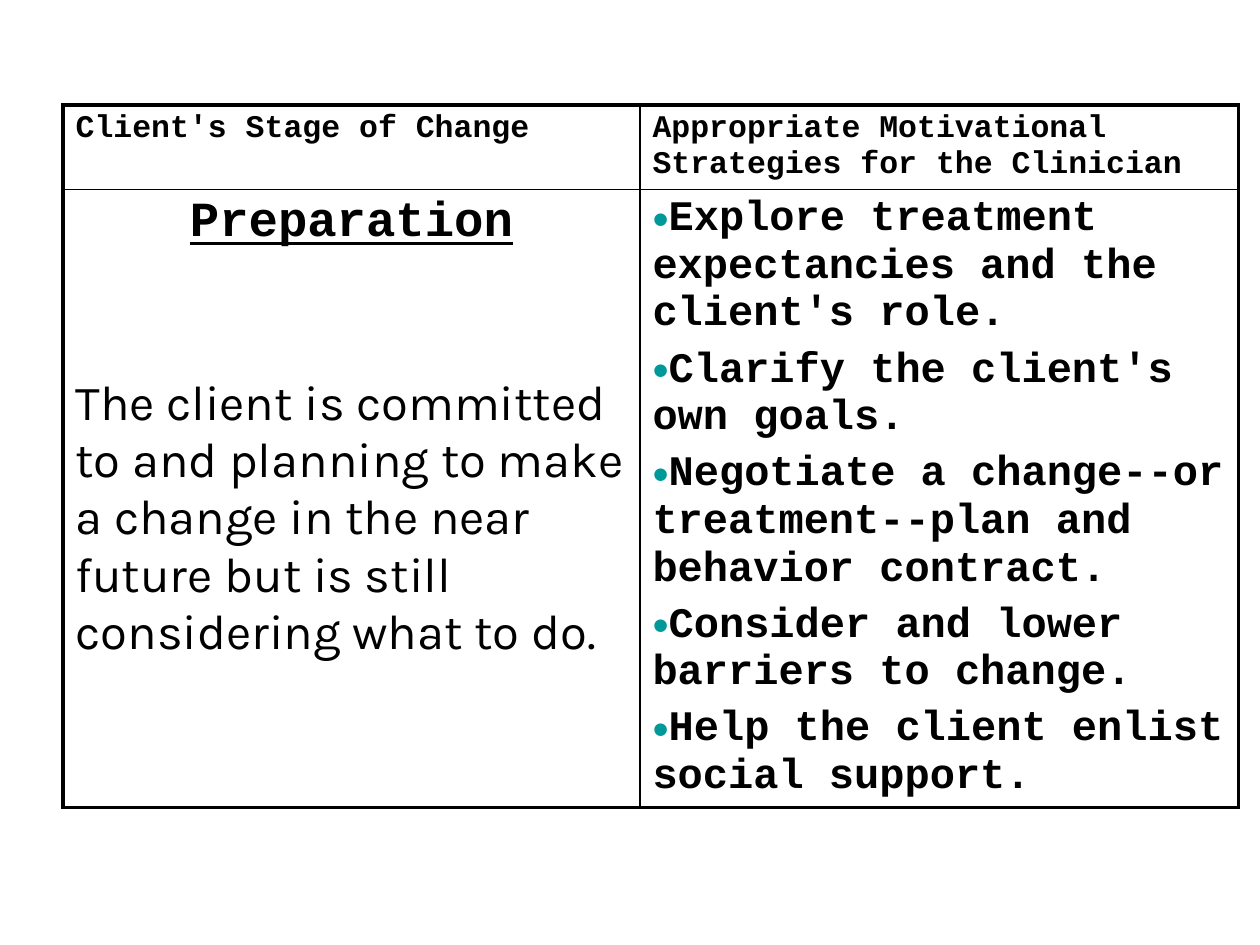
"""Build a slide with a two-column table on the preparation stage of change."""
from lxml.etree import SubElement
from pptx import Presentation
from pptx.dml.color import RGBColor
from pptx.enum.text import PP_ALIGN
from pptx.oxml.ns import qn
from pptx.util import Cm, Pt

COLORS = {"ink": "000000", "bullet": "009999"}
MONO, SANS = "Courier New", "Karla"
STYLES = {
    "header": dict(font=MONO, size=18, bold=True),
    "stage": dict(font=MONO, size=28, bold=True, underline=True, align=PP_ALIGN.CENTER),
    "description": dict(font=SANS, size=28, before=71),
    "strategy": dict(font=MONO, size=24, bold=True, before=4.8, bullet="•"),
}
STRATEGIES = [
    "Explore treatment expectancies and the client's role.",
    "Clarify the client's own goals.",
    "Negotiate a change--or treatment--plan and behavior contract.",
    "Consider and lower barriers to change.",
    "Help the client enlist social support.",
]
ROWS = [
    [
        [("header", "Client's Stage of Change")],
        [("header", "Appropriate Motivational Strategies for the Clinician")],
    ],
    [
        [
            ("stage", "Preparation"),
            ("description", "The client is committed to and planning to make a change "
                            "in the near future but is still considering what to do."),
        ],
        [("strategy", strategy) for strategy in STRATEGIES],
    ],
]
LEFT, TOP = 1.27, 2.12
COLUMN_WIDTHS = [11.63, 12.07]
ROW_HEIGHTS = [1.69, 12.46]
OUTER_LINE, INNER_LINE = 2.25, 1


def add_bullet(paragraph, character):
    properties = paragraph._p.get_or_add_pPr()
    properties.set("marL", "0")
    properties.set("indent", "0")
    color = SubElement(properties, qn("a:buClr"))
    SubElement(color, qn("a:srgbClr"), val=COLORS["bullet"])
    SubElement(properties, qn("a:buSzPct"), val="110000")
    SubElement(properties, qn("a:buFont"), typeface="Arial")
    SubElement(properties, qn("a:buChar"), char=character)


def write_paragraph(paragraph, text, style, is_first):
    paragraph.text = text
    if "bullet" in style:
        add_bullet(paragraph, style["bullet"])
    paragraph.alignment = style.get("align", PP_ALIGN.LEFT)
    paragraph.space_before = Pt(0 if is_first else style["before"])
    font = paragraph.runs[0].font
    font.name = style["font"]
    font.size = Pt(style["size"])
    font.bold = style.get("bold", False)
    font.underline = style.get("underline", False)
    font.color.rgb = RGBColor.from_string(COLORS["ink"])


def draw_borders(cell, row, column):
    outer_sides = {
        "L": column == 0,
        "R": column == len(COLUMN_WIDTHS) - 1,
        "T": row == 0,
        "B": row == len(ROW_HEIGHTS) - 1,
    }
    properties = cell._tc.get_or_add_tcPr()
    for side, is_outer in outer_sides.items():
        width = Pt(OUTER_LINE if is_outer else INNER_LINE)
        line = SubElement(properties, qn(f"a:ln{side}"), w=str(width))
        fill = SubElement(line, qn("a:solidFill"))
        SubElement(fill, qn("a:srgbClr"), val=COLORS["ink"])


def fill_cell(cell, content):
    frame = cell.text_frame
    for index, (style, text) in enumerate(content):
        paragraph = frame.add_paragraph() if index else frame.paragraphs[0]
        write_paragraph(paragraph, text, STYLES[style], index == 0)


def main():
    presentation = Presentation()
    presentation.slide_width, presentation.slide_height = Cm(25.4), Cm(19.05)
    slide = presentation.slides.add_slide(presentation.slide_layouts[6])
    stages = slide.shapes.add_table(
        len(ROW_HEIGHTS), len(COLUMN_WIDTHS), Cm(LEFT), Cm(TOP),
        Cm(sum(COLUMN_WIDTHS)), Cm(sum(ROW_HEIGHTS)),
    ).table
    stages.first_row = stages.horz_banding = False
    for column, width in zip(stages.columns, COLUMN_WIDTHS):
        column.width = Cm(width)
    for row, height in zip(stages.rows, ROW_HEIGHTS):
        row.height = Cm(height)
    for row, contents in enumerate(ROWS):
        for column, content in enumerate(contents):
            cell = stages.cell(row, column)
            draw_borders(cell, row, column)
            cell.fill.background()
            fill_cell(cell, content)
    presentation.save("out.pptx")


if __name__ == "__main__":
    main()
